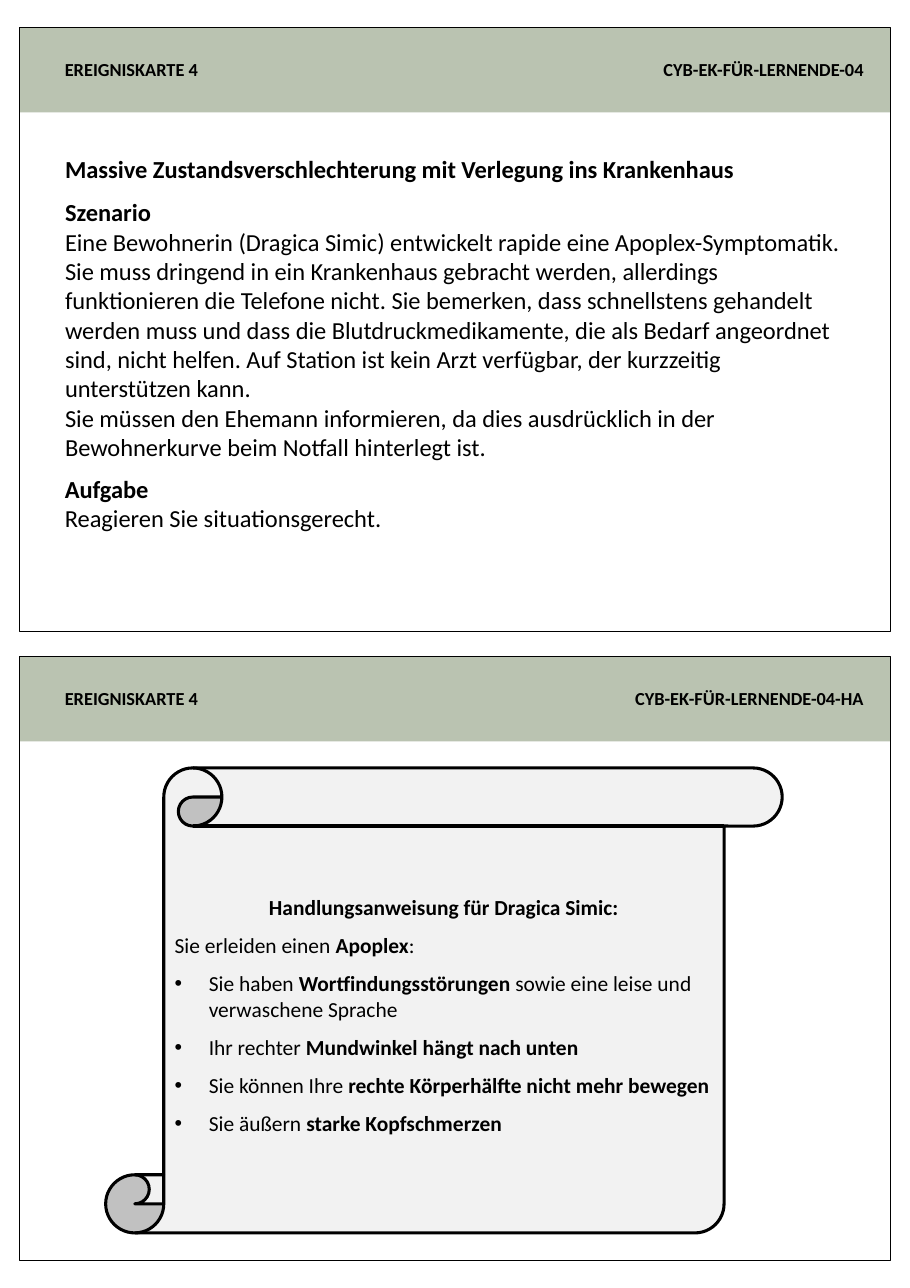
from dataclasses import dataclass

from lxml.etree import SubElement
from pptx import Presentation
from pptx.dml.color import RGBColor
from pptx.enum.shapes import MSO_SHAPE
from pptx.enum.text import MSO_ANCHOR, MSO_AUTO_SIZE, PP_ALIGN
from pptx.oxml.ns import qn
from pptx.util import Inches, Pt


@dataclass(frozen=True)
class Theme:
    font: str = "Calibri"
    ink: RGBColor = RGBColor(0, 0, 0)
    band: RGBColor = RGBColor(0xBA, 0xC3, 0xB1)
    scroll: RGBColor = RGBColor(0xF2, 0xF2, 0xF2)
    label: int = 12
    text: int = 16
    note: int = 14
    thin: float = 0.75
    thick: float = 2


THEME = Theme()
WIDTH, HEIGHT = 8.26, 11.69
CARD = dict(x=0.18, w=7.9, h=5.48)
TOPS = 0.25, 5.96
NAME = "EREIGNISKARTE 4"
CODE = "CYB-EK-FÜR-LERNENDE-04"
TITLE = "Massive Zustandsverschlechterung mit Verlegung ins Krankenhaus"
SCENE = [
    "*Szenario*",
    "Eine Bewohnerin (Dragica Simic) entwickelt rapide eine "
    "Apoplex-Symptomatik. Sie muss dringend in ein Krankenhaus gebracht "
    "werden, allerdings funktionieren die Telefone nicht. Sie bemerken, dass "
    "schnellstens gehandelt werden muss und dass die Blutdruckmedikamente, "
    "die als Bedarf angeordnet sind, nicht helfen. Auf Station ist kein Arzt "
    "verfügbar, der kurzzeitig unterstützen kann.",
    "Sie müssen den Ehemann informieren, da dies ausdrücklich in der "
    "Bewohnerkurve beim Notfall hinterlegt ist.",
]
TASK = ["*Aufgabe*", "Reagieren Sie situationsgerecht."]
HEAD = "*Handlungsanweisung für Dragica Simic:*"
LEAD = "Sie erleiden einen *Apoplex*:"
SIGNS = [
    "Sie haben *Wortfindungsstörungen* sowie eine leise und verwaschene Sprache",
    "Ihr rechter *Mundwinkel hängt nach unten*",
    "Sie können Ihre *rechte Körperhälfte nicht mehr bewegen*",
    "Sie äußern *starke Kopfschmerzen*",
]


def apply(item, values):
    for key, value in values.items():
        setattr(item, key, value)


def place(shape, x, y, w, h):
    apply(shape, dict(left=Inches(x), top=Inches(y),
                      width=Inches(w), height=Inches(h)))


def mark(para, char):
    props = para._p.get_or_add_pPr()
    props.set("marL", str(Inches(0.31) if char else 0))
    props.set("indent", str(Inches(-0.31) if char else 0))
    if char:
        SubElement(props, qn("a:buFont")).set("typeface", "Arial")
        SubElement(props, qn("a:buChar")).set("char", char)
    else:
        SubElement(props, qn("a:buNone"))


def write(frame, lines, size, align=PP_ALIGN.LEFT, after=0,
          anchor=MSO_ANCHOR.TOP):
    apply(frame, dict(word_wrap=True, auto_size=MSO_AUTO_SIZE.NONE,
                      vertical_anchor=anchor))
    for index, line in enumerate(lines):
        para = frame.paragraphs[0] if index == 0 else frame.add_paragraph()
        mark(para, None)
        apply(para, dict(alignment=align, space_before=Pt(0),
                         space_after=Pt(after)))
        for turn, part in enumerate(line.split("*")):
            if part:
                run = para.add_run()
                run.text = part
                apply(run.font, dict(name=THEME.font, size=Pt(size),
                                     bold=turn % 2 == 1))
                run.font.color.rgb = THEME.ink


def form(slide, kind, box, fill=None, line=None):
    shape = slide.shapes.add_shape(kind, *map(Inches, box))
    shape.shadow.inherit = False
    if fill is None:
        shape.fill.background()
    else:
        shape.fill.solid()
        shape.fill.fore_color.rgb = fill
    if line is None:
        shape.line.fill.background()
    else:
        shape.line.color.rgb = THEME.ink
        shape.line.width = Pt(line)
    return shape


def label(slide, box, lines, size, align=PP_ALIGN.LEFT):
    text = slide.shapes.add_textbox(*map(Inches, box))
    write(text.text_frame, lines, size, align)


def card(slide, x, y, w, h, code):
    form(slide, MSO_SHAPE.RECTANGLE, (x, y, w, 0.77), THEME.band)
    form(slide, MSO_SHAPE.RECTANGLE, (x, y, w, h), line=THEME.thin)
    label(slide, (x + 0.31, y + 0.23, 3.5, 0.3), [f"*{NAME}*"], THEME.label)
    label(slide, (x + w - 3.45, y + 0.23, 3.31, 0.3), [f"*{code}*"],
          THEME.label, PP_ALIGN.RIGHT)


def event(slide, x, y, w, h):
    card(slide, x, y, w, h, CODE)
    title, body = slide.placeholders
    left = x + 0.31
    place(title, left, y + 1.1, 6.95, 0.37)
    write(title.text_frame, [f"*{TITLE}*"], THEME.text)
    place(body, left, y + 1.49, 7.25, 2.52)
    write(body.text_frame, SCENE, THEME.text)
    label(slide, (left, y + 4, 6.95, 0.91), TASK, THEME.text)


def guide(slide, x, y, w, h):
    card(slide, x, y, w, h, f"{CODE}-HA")
    sheet = form(slide, MSO_SHAPE.VERTICAL_SCROLL,
                 (x + 0.78, y + 1.01, 6.14, 4.22), THEME.scroll, THEME.thick)
    frame = sheet.text_frame
    write(frame, [HEAD, LEAD, *SIGNS], THEME.note, after=8,
          anchor=MSO_ANCHOR.MIDDLE)
    frame.paragraphs[0].alignment = PP_ALIGN.CENTER
    for para in frame.paragraphs[2:]:
        props = para._p.get_or_add_pPr()
        props.remove(props.find(qn("a:buNone")))
        mark(para, "•")


def main():
    deck = Presentation()
    apply(deck, dict(slide_width=Inches(WIDTH), slide_height=Inches(HEIGHT)))
    slide = deck.slides.add_slide(deck.slide_layouts[1])
    for draw, top in zip((event, guide), TOPS):
        draw(slide, y=top, **CARD)
    deck.save("out.pptx")


if __name__ == "__main__":
    main()
